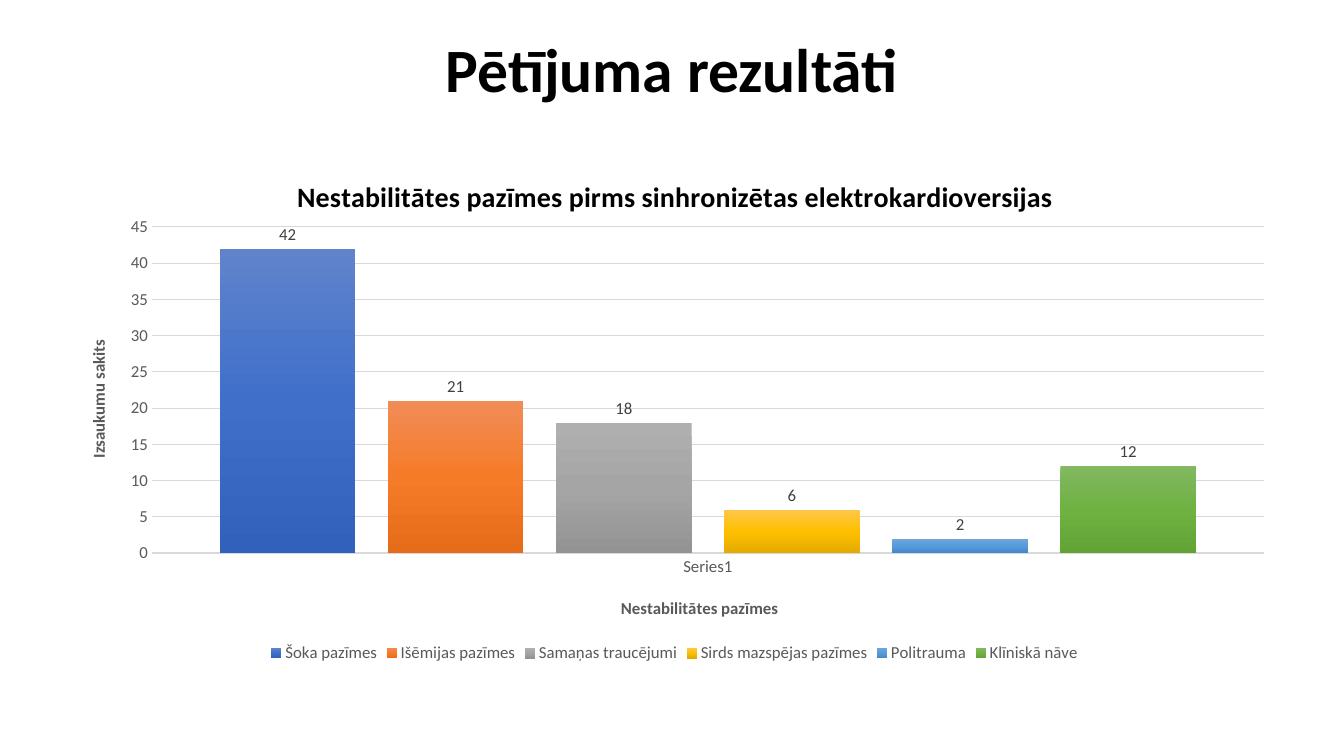
from copy import deepcopy

from lxml import etree
from pptx import Presentation
from pptx.chart.data import CategoryChartData
from pptx.dml.color import RGBColor
from pptx.enum.chart import (XL_CHART_TYPE, XL_LABEL_POSITION,
                             XL_LEGEND_POSITION, XL_TICK_MARK)
from pptx.enum.text import MSO_ANCHOR, PP_ALIGN
from pptx.oxml.ns import qn
from pptx.util import Cm, Pt

COLUMNS = XL_CHART_TYPE.COLUMN_CLUSTERED
OUTSIDE_END = XL_LABEL_POSITION.OUTSIDE_END
BOTTOM = XL_LEGEND_POSITION.BOTTOM
NO_TICK = XL_TICK_MARK.NONE
MIDDLE = MSO_ANCHOR.MIDDLE
CENTER = PP_ALIGN.CENTER

# Content
HEADING = "Pētījuma rezultāti"
CHART_TITLE = "Nestabilitātes pazīmes pirms sinhronizētas elektrokardioversijas"
CATEGORY_TITLE = "Nestabilitātes pazīmes"
VALUE_TITLE = "Izsaukumu sakits"
CATEGORY = "Series1"
SIGNS = [  # name, value, gradient from top to bottom
    ("Šoka pazīmes", 42, ("6183CB", "3E70CA", "3062BB")),
    ("Išēmijas pazīmes", 21, ("F18C57", "F67B28", "E56C19")),
    ("Samaņas traucējumi", 18, ("AFAFAF", "A5A5A5", "939393")),
    ("Sirds mazspējas pazīmes", 6, ("FFC64B", "FFC000", "E3AB00")),
    ("Politrauma", 2, ("71A6DB", "559BDB", "448ACA")),
    ("Klīniskā nāve", 12, ("81B861", "6FB242", "62A336")),
]

THEME = {
    "font": "Calibri",
    "black": "000000", "text": "595959", "label": "404040", "line": "D9D9D9",
    "heading_size": 44, "title_size": 20, "small_size": 12,
}

# Places on the slide in cm: left, top, width, height
HEADING_BOX = (2.33, 0, 29.21, 3.68)
CHART_BOX = (1.47, 3.68, 31.01, 13.21)
PLOT_BOX = (3.83, 5.72, 28.02, 8.22)
LEGEND_BOX = (6.6, 16.25, 20.8, 0.6)
CHART_TITLE_AT = (7.36, 4.33)
CATEGORY_TITLE_AT = (15.57, 14.97)
VALUE_TITLE_AT = (2.12, 8.49)


def style_font(font, size, color, bold=False):
    font.name = THEME["font"]
    font.size = Pt(THEME[size])
    font.bold = bold
    font.color.rgb = RGBColor.from_string(THEME[color])


def add_run(paragraph, text, size, color):
    run = paragraph.add_run()
    run.text = text
    style_font(run.font, size, color, bold=True)


def place(element, box, index, inner=False):
    """Fix a chart part at a slide position given in cm."""
    for old in element.findall(qn("c:layout")):
        element.remove(old)
    layout = etree.Element(qn("c:layout"))
    manual = etree.SubElement(layout, qn("c:manualLayout"))
    left, top, width, height = CHART_BOX
    fractions = [(box[0] - left) / width, (box[1] - top) / height]
    if len(box) == 4:
        fractions += [box[2] / width, box[3] / height]
    settings = [("layoutTarget", "inner")] if inner else []
    settings += [("xMode", "edge"), ("yMode", "edge")]
    settings += [(name, f"{value:.4f}") for name, value in zip("xywh", fractions)]
    for name, value in settings:
        etree.SubElement(manual, qn("c:" + name), val=value)
    element.insert(index, layout)


def add_title(owner, title, text, size, color, position):
    owner.has_title = True
    add_run(title.text_frame.paragraphs[0], text, size, color)
    place(title._element, position, 1)


def fill_gradient(series, colors):
    fill = series.format.fill
    fill.gradient()
    fill.gradient_angle = 270
    stop_list = series._element.find(".//" + qn("a:gsLst"))
    stop_list.append(deepcopy(stop_list[0]))
    for index, (stop, color) in enumerate(zip(fill.gradient_stops, colors)):
        stop.position = index / 2
        stop.color.rgb = RGBColor.from_string(color)


presentation = Presentation()
presentation.slide_width, presentation.slide_height = Cm(33.87), Cm(19.05)
slide = presentation.slides.add_slide(presentation.slide_layouts[6])

# Heading
frame = slide.shapes.add_textbox(*map(Cm, HEADING_BOX)).text_frame
frame.word_wrap = True
frame.vertical_anchor = MIDDLE
paragraph = frame.paragraphs[0]
paragraph.alignment = CENTER
paragraph.line_spacing = 0.9
add_run(paragraph, HEADING, "heading_size", "black")

# Chart
data = CategoryChartData()
data.categories = [CATEGORY]
for name, value, _ in SIGNS:
    data.add_series(name, [value])
chart = slide.shapes.add_chart(COLUMNS, *map(Cm, CHART_BOX), data).chart
style_font(chart.font, "small_size", "text")
add_title(chart, chart.chart_title, CHART_TITLE, "title_size", "black",
          CHART_TITLE_AT)
place(chart._chartSpace.find(".//" + qn("c:plotArea")), PLOT_BOX, 0, inner=True)

# Columns
plot = chart.plots[0]
plot.gap_width = 100
plot.overlap = -24
plot.vary_by_categories = False
for series, (_, _, colors) in zip(plot.series, SIGNS):
    fill_gradient(series, colors)
    labels = series.data_labels
    labels.show_value = True
    labels.position = OUTSIDE_END
    style_font(labels.font, "small_size", "label")

# Axes
line_color = RGBColor.from_string(THEME["line"])
for axis, text, position in (
        (chart.category_axis, CATEGORY_TITLE, CATEGORY_TITLE_AT),
        (chart.value_axis, VALUE_TITLE, VALUE_TITLE_AT)):
    axis.major_tick_mark = axis.minor_tick_mark = NO_TICK
    style_font(axis.tick_labels.font, "small_size", "text")
    add_title(axis, axis.axis_title, text, "small_size", "text", position)
category_line = chart.category_axis.format.line
category_line.color.rgb = line_color
category_line.width = Pt(1)
value_axis = chart.value_axis
value_axis.minimum_scale, value_axis.maximum_scale = 0, 45
value_axis.major_unit = 5
value_axis.format.line.fill.background()
grid_line = value_axis.major_gridlines.format.line
grid_line.color.rgb = line_color
grid_line.width = Pt(0.75)

# Legend
chart.has_legend = True
legend = chart.legend
legend.position = BOTTOM
legend.include_in_layout = False
style_font(legend.font, "small_size", "text")
place(legend._element, LEGEND_BOX, 1)

presentation.save("out.pptx")
